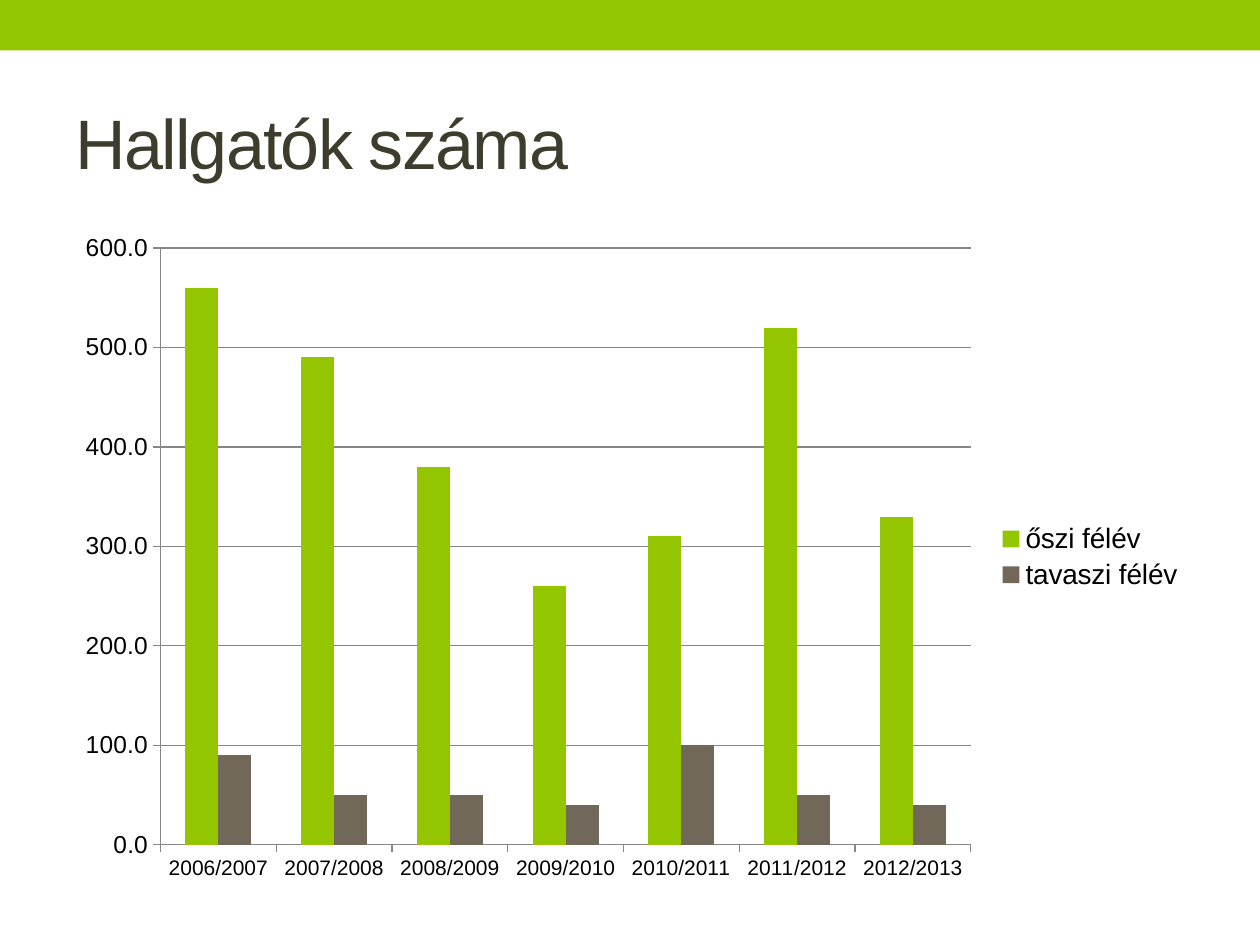
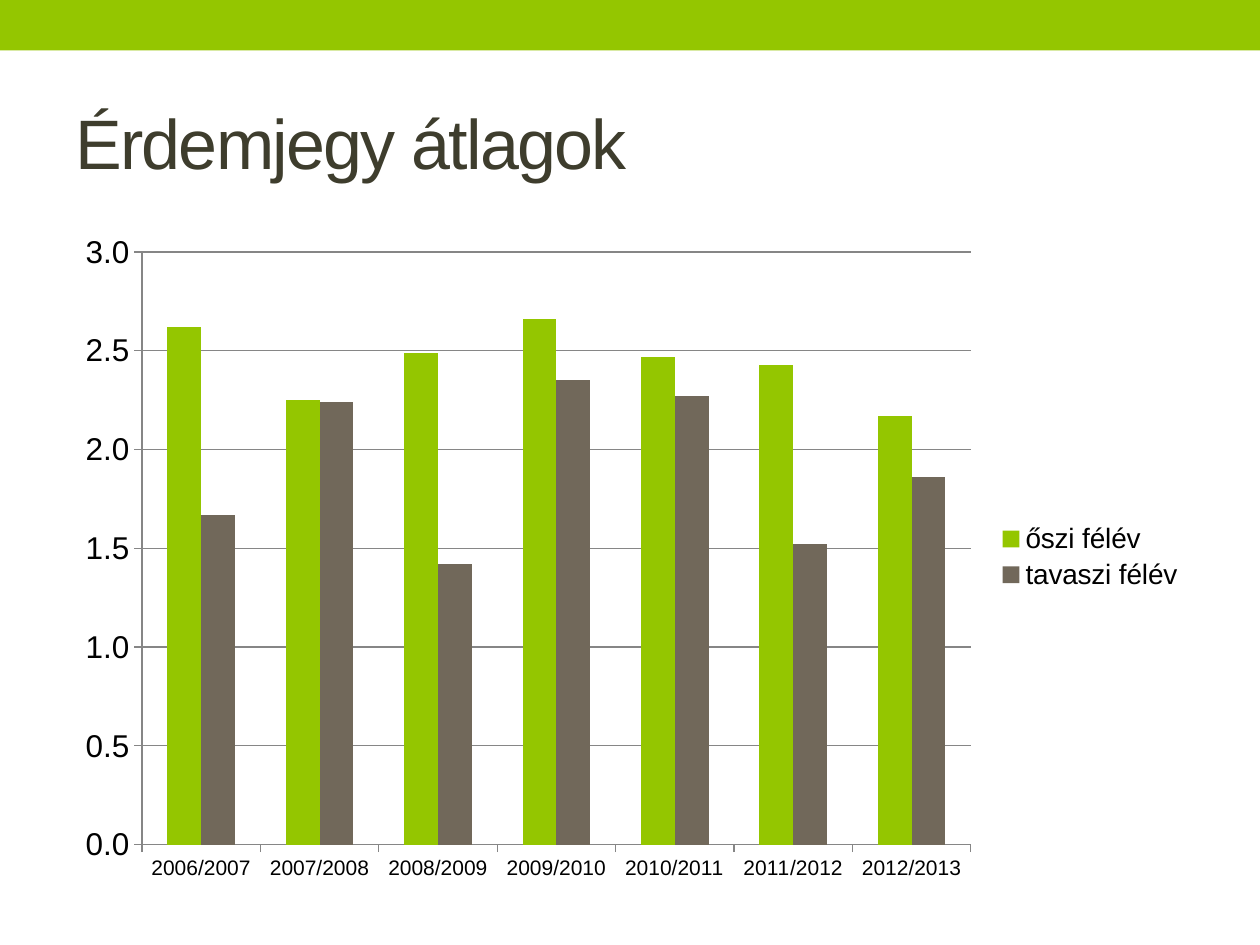
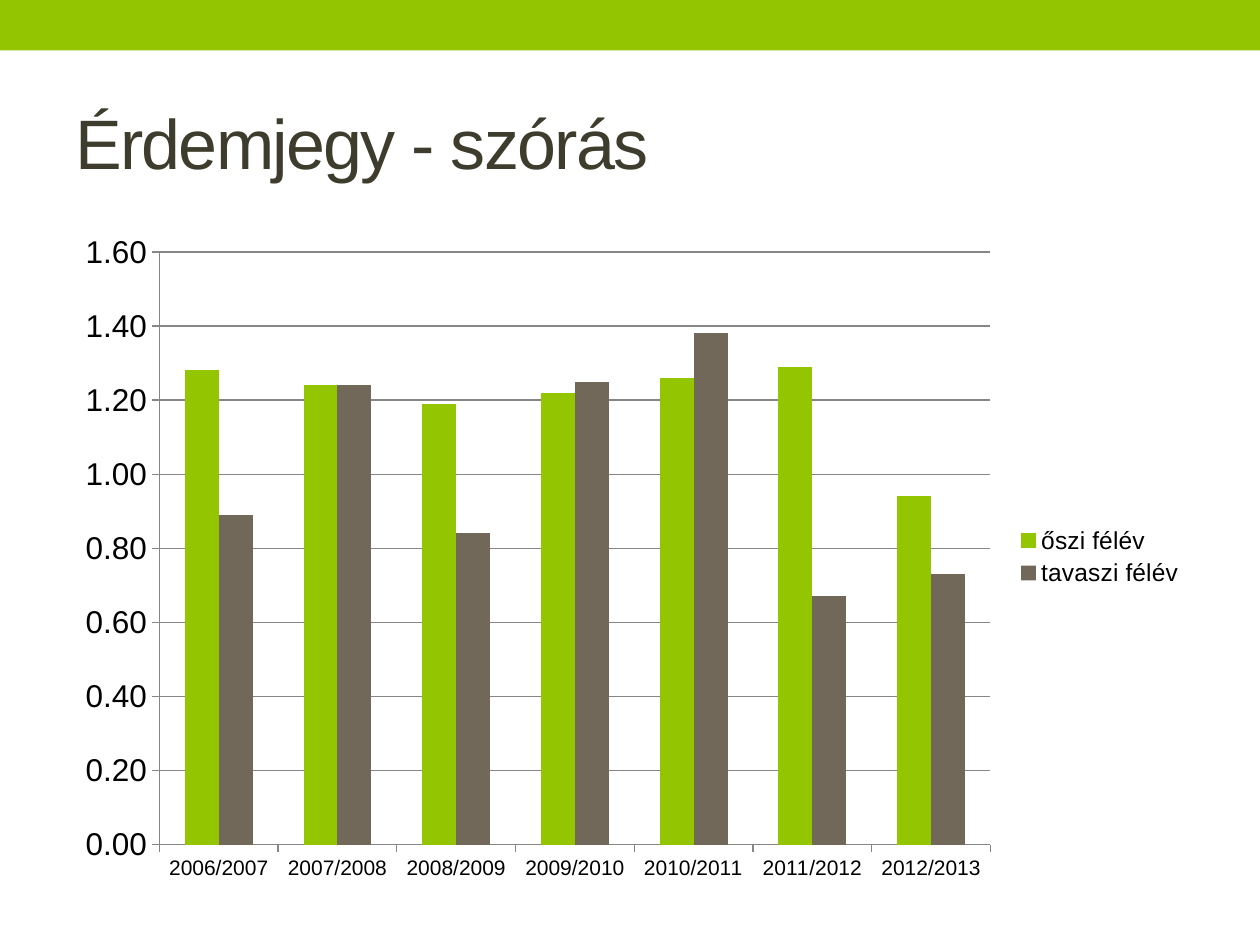
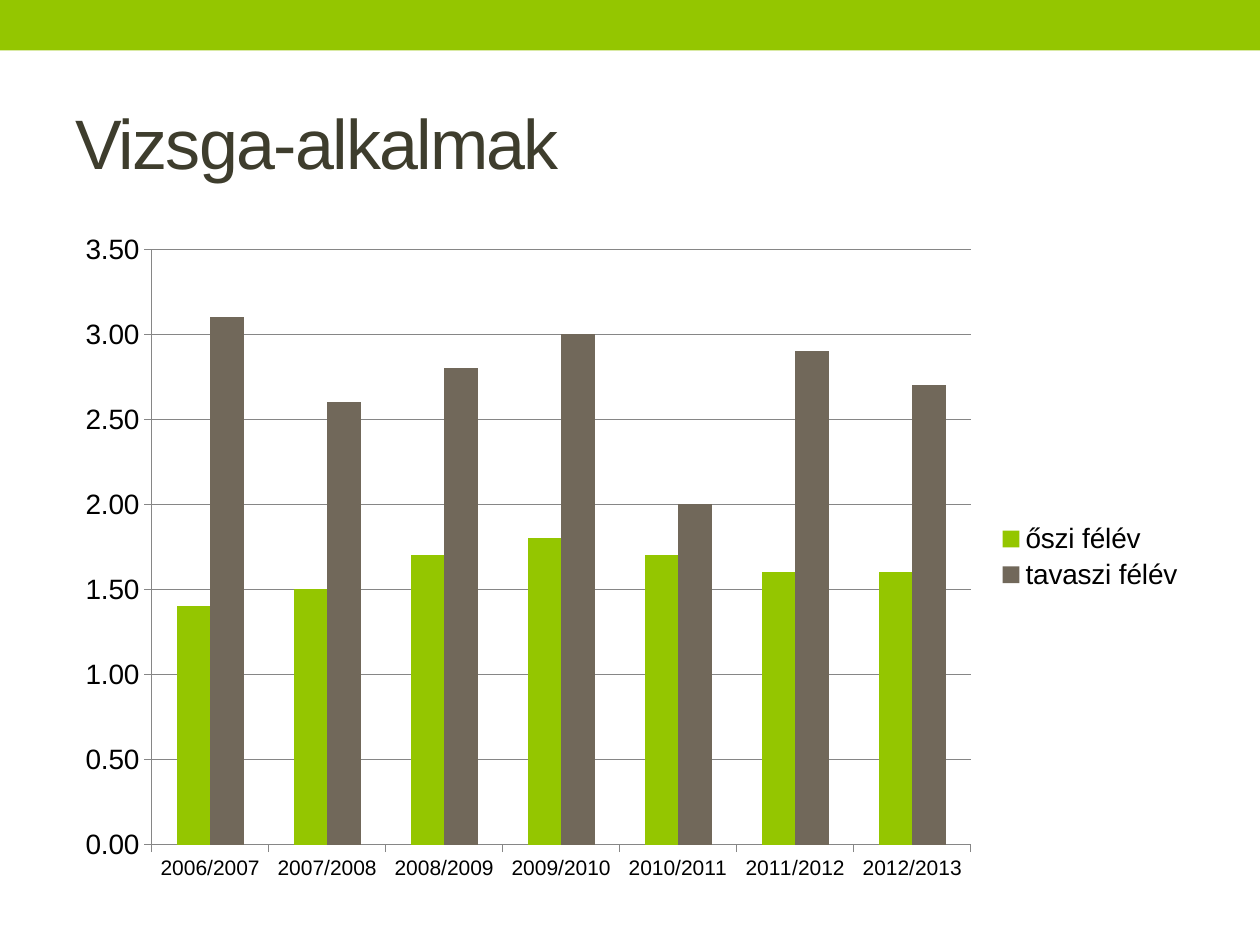
import pptx
import pptx.chart.data
import pptx.dml.color
import pptx.enum.chart
import pptx.enum.shapes
import pptx.enum.text
import pptx.util

Cm, Pt = pptx.util.Cm, pptx.util.Pt
RGBColor = pptx.dml.color.RGBColor

GREEN = RGBColor(0x94, 0xC6, 0x00)
BROWN = RGBColor(0x71, 0x68, 0x5A)
OLIVE = RGBColor(0x3E, 0x3D, 0x2D)
GREY = RGBColor(0x86, 0x86, 0x86)
BLACK = RGBColor(0, 0, 0)
FONT = "Arial"

YEARS = [f"{year}/{year + 1}" for year in range(2006, 2013)]
TERMS = [("őszi félév", GREEN), ("tavaszi félév", BROWN)]

SLIDES = [
    {"title": "Hallgatók száma", "format": "0.0", "top": 600, "step": 100,
     "axis": 14, "legend": 16,
     "values": [[560, 490, 380, 260, 310, 520, 330],
                [90, 50, 50, 40, 100, 50, 40]]},
    {"title": "Érdemjegy átlagok", "format": "###0.0", "top": 3, "step": 0.5,
     "axis": 18, "legend": 16,
     "values": [[2.62, 2.25, 2.49, 2.66, 2.47, 2.43, 2.17],
                [1.67, 2.24, 1.42, 2.35, 2.27, 1.52, 1.86]]},
    {"title": "Érdemjegy - szórás", "format": "###0.00", "top": 1.6, "step": 0.2,
     "axis": 18, "legend": 14,
     "values": [[1.28, 1.24, 1.19, 1.22, 1.26, 1.29, 0.94],
                [0.89, 1.24, 0.84, 1.25, 1.38, 0.67, 0.73]]},
    {"title": "Vizsga-alkalmak", "format": "###0.00", "top": 3.5, "step": 0.5,
     "axis": 16, "legend": 16,
     "values": [[1.4, 1.5, 1.7, 1.8, 1.7, 1.6, 1.6],
                [3.1, 2.6, 2.8, 3, 2, 2.9, 2.7]]},
]

WIDTH, HEIGHT = Cm(25.4), Cm(19.05)
LEFT = Cm(1.27)
INNER = WIDTH - 2 * LEFT


def add_band(slide):
    band = slide.shapes.add_shape(
        pptx.enum.shapes.MSO_SHAPE.RECTANGLE, 0, 0, WIDTH, Cm(1.02))
    band.shadow.inherit = False
    band.fill.solid()
    band.fill.fore_color.rgb = GREEN
    band.line.fill.background()


def add_title(slide, text):
    frame = slide.shapes.add_textbox(LEFT, Cm(1.48), INNER, Cm(2.75)).text_frame
    frame.word_wrap = True
    frame.vertical_anchor = pptx.enum.text.MSO_ANCHOR.MIDDLE
    run = frame.paragraphs[0].add_run()
    run.text = text
    set_font(run.font, 40, OLIVE)
    run._r.get_or_add_rPr().set("spc", "-100")


def set_font(font, size, color=BLACK):
    font.name = FONT
    font.size = Pt(size)
    font.color.rgb = color


def set_line(line):
    line.color.rgb = GREY
    line.width = Pt(0.75)


def style_axis(axis, size):
    axis.major_tick_mark = pptx.enum.chart.XL_TICK_MARK.OUTSIDE
    axis.minor_tick_mark = pptx.enum.chart.XL_TICK_MARK.NONE
    set_font(axis.tick_labels.font, size)
    set_line(axis.format.line)


def add_chart(slide, item):
    data = pptx.chart.data.CategoryChartData()
    data.categories = YEARS
    for (term, _), values in zip(TERMS, item["values"]):
        data.add_series(term, values)
    chart = slide.shapes.add_chart(
        pptx.enum.chart.XL_CHART_TYPE.COLUMN_CLUSTERED,
        LEFT, Cm(4.45), INNER, Cm(13.55), data).chart
    set_font(chart.font, 10)
    chart.has_title = False

    plot = chart.plots[0]
    plot.gap_width = 150
    plot.overlap = 0
    plot.vary_by_categories = False
    for series, (_, color) in zip(plot.series, TERMS):
        series.format.fill.solid()
        series.format.fill.fore_color.rgb = color

    style_axis(chart.category_axis, 12)
    scale = chart.value_axis
    style_axis(scale, item["axis"])
    scale.minimum_scale = 0
    scale.maximum_scale = item["top"]
    scale.major_unit = item["step"]
    scale.tick_labels.number_format = item["format"]
    scale.tick_labels.number_format_is_linked = False
    scale.has_major_gridlines = True
    set_line(scale.major_gridlines.format.line)

    chart.has_legend = True
    chart.legend.position = pptx.enum.chart.XL_LEGEND_POSITION.RIGHT
    chart.legend.include_in_layout = False
    set_font(chart.legend.font, item["legend"])


def main():
    deck = pptx.Presentation()
    deck.slide_width, deck.slide_height = WIDTH, HEIGHT
    for item in SLIDES:
        slide = deck.slides.add_slide(deck.slide_layouts[6])
        add_band(slide)
        add_title(slide, item["title"])
        add_chart(slide, item)
    deck.save("out.pptx")


if __name__ == "__main__":
    main()
